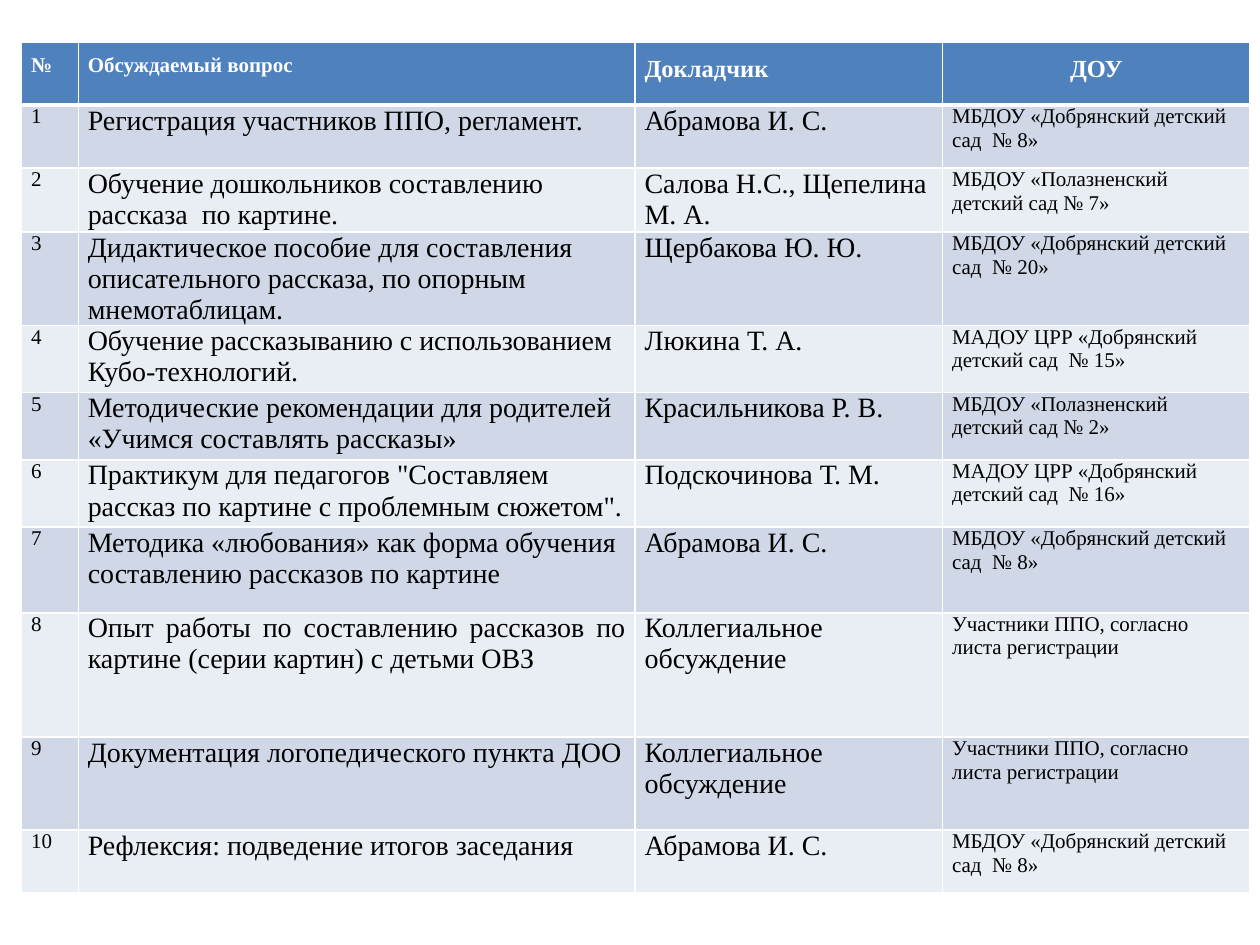
"""Build a slide with the agenda table of a teachers' meeting."""
from lxml import etree
from pptx import Presentation
from pptx.dml.color import RGBColor
from pptx.enum.text import PP_ALIGN
from pptx.oxml.ns import qn
from pptx.util import Pt

LEFT, CENTER, JUSTIFY = PP_ALIGN.LEFT, PP_ALIGN.CENTER, PP_ALIGN.JUSTIFY
WHITE = RGBColor(0xFF, 0xFF, 0xFF)
BLACK = RGBColor(0x00, 0x00, 0x00)
HEADER_BLUE = RGBColor(0x4F, 0x81, 0xBD)
BAND_DARK = RGBColor(0xD0, 0xD8, 0xE8)
BAND_LIGHT = RGBColor(0xE9, 0xED, 0xF4)

COLUMN_WIDTHS = [32.4, 318.2, 175.7, 175.7]
ROW_HEIGHTS = [36, 36, 36.7, 38.4, 38.4, 38.4, 38.4, 49, 71, 53.2, 36]
HEADER_SIZES = [12, 12, 14, 14]
BODY_SIZES = [12, 16, 16, 12]
FIRST_JUSTIFIED_ROW = 8

HEADER = ["№", "Обсуждаемый вопрос", "Докладчик", "ДОУ"]
AGENDA = [
    ("Регистрация участников ППО, регламент.",
     "Абрамова И. С.", "МБДОУ «Добрянский детский сад  № 8»"),
    ("Обучение дошкольников составлению рассказа  по картине.",
     "Салова Н.С., Щепелина М. А.", "МБДОУ «Полазненский детский сад № 7»"),
    ("Дидактическое пособие для составления описательного рассказа, по опорным мнемотаблицам.",
     "Щербакова Ю. Ю.", "МБДОУ «Добрянский детский сад  № 20»"),
    ("Обучение рассказыванию с использованием Кубо-технологий.",
     "Люкина Т. А.", "МАДОУ ЦРР «Добрянский детский сад  № 15»"),
    ("Методические рекомендации для родителей «Учимся составлять рассказы»",
     "Красильникова Р. В.", "МБДОУ «Полазненский детский сад № 2»"),
    ('Практикум для педагогов "Составляем рассказ по картине с проблемным сюжетом".',
     "Подскочинова Т. М.", "МАДОУ ЦРР «Добрянский детский сад  № 16»"),
    ("Методика «любования» как форма обучения составлению рассказов по картине",
     "Абрамова И. С.", "МБДОУ «Добрянский детский сад  № 8»"),
    ("Опыт работы по составлению рассказов по картине (серии картин) с детьми ОВЗ",
     "Коллегиальное обсуждение", "Участники ППО, согласно листа регистрации"),
    ("Документация логопедического пункта ДОО",
     "Коллегиальное обсуждение", "Участники ППО, согласно листа регистрации"),
    ("Рефлексия: подведение итогов заседания",
     "Абрамова И. С.", "МБДОУ «Добрянский детский сад  № 8»"),
]


def add_border(cell, side, width):
    properties = cell._tc.get_or_add_tcPr()
    line = etree.SubElement(properties, qn(f"a:ln{side}"), w=str(Pt(width)))
    fill = etree.SubElement(line, qn("a:solidFill"))
    etree.SubElement(fill, qn("a:srgbClr"), val=str(WHITE))


presentation = Presentation()
presentation.slide_width = Pt(720)
presentation.slide_height = Pt(540)
slide = presentation.slides.add_slide(presentation.slide_layouts[6])

rows = [HEADER] + [(str(number), *item) for number, item in enumerate(AGENDA, 1)]
table = slide.shapes.add_table(
    len(rows), len(HEADER), Pt(12.4), Pt(24),
    Pt(sum(COLUMN_WIDTHS)), Pt(sum(ROW_HEIGHTS))).table
for column, width in zip(table.columns, COLUMN_WIDTHS):
    column.width = Pt(width)
for row, height in zip(table.rows, ROW_HEIGHTS):
    row.height = Pt(height)

for row_index, texts in enumerate(rows):
    is_header = row_index == 0
    band = BAND_DARK if row_index % 2 else BAND_LIGHT
    sizes = HEADER_SIZES if is_header else BODY_SIZES
    for column_index, text in enumerate(texts):
        cell = table.cell(row_index, column_index)
        cell.margin_left = cell.margin_right = Pt(5.4)
        cell.margin_top = cell.margin_bottom = 0
        for side in "LRTB":
            is_header_edge = (row_index, side) in ((0, "B"), (1, "T"))
            add_border(cell, side, 3 if is_header_edge else 1)
        cell.fill.solid()
        cell.fill.fore_color.rgb = HEADER_BLUE if is_header else band

        cell.text = text
        paragraph = cell.text_frame.paragraphs[0]
        paragraph.alignment = LEFT
        if is_header:
            paragraph.line_spacing = 1.5
            if column_index == 3:
                paragraph.alignment = CENTER
        elif column_index == 1 and row_index >= FIRST_JUSTIFIED_ROW:
            paragraph.alignment = JUSTIFY
        paragraph.font.name = "Times New Roman"
        paragraph.font.size = Pt(sizes[column_index])
        paragraph.font.bold = is_header
        paragraph.font.color.rgb = WHITE if is_header else BLACK

presentation.save("out.pptx")
